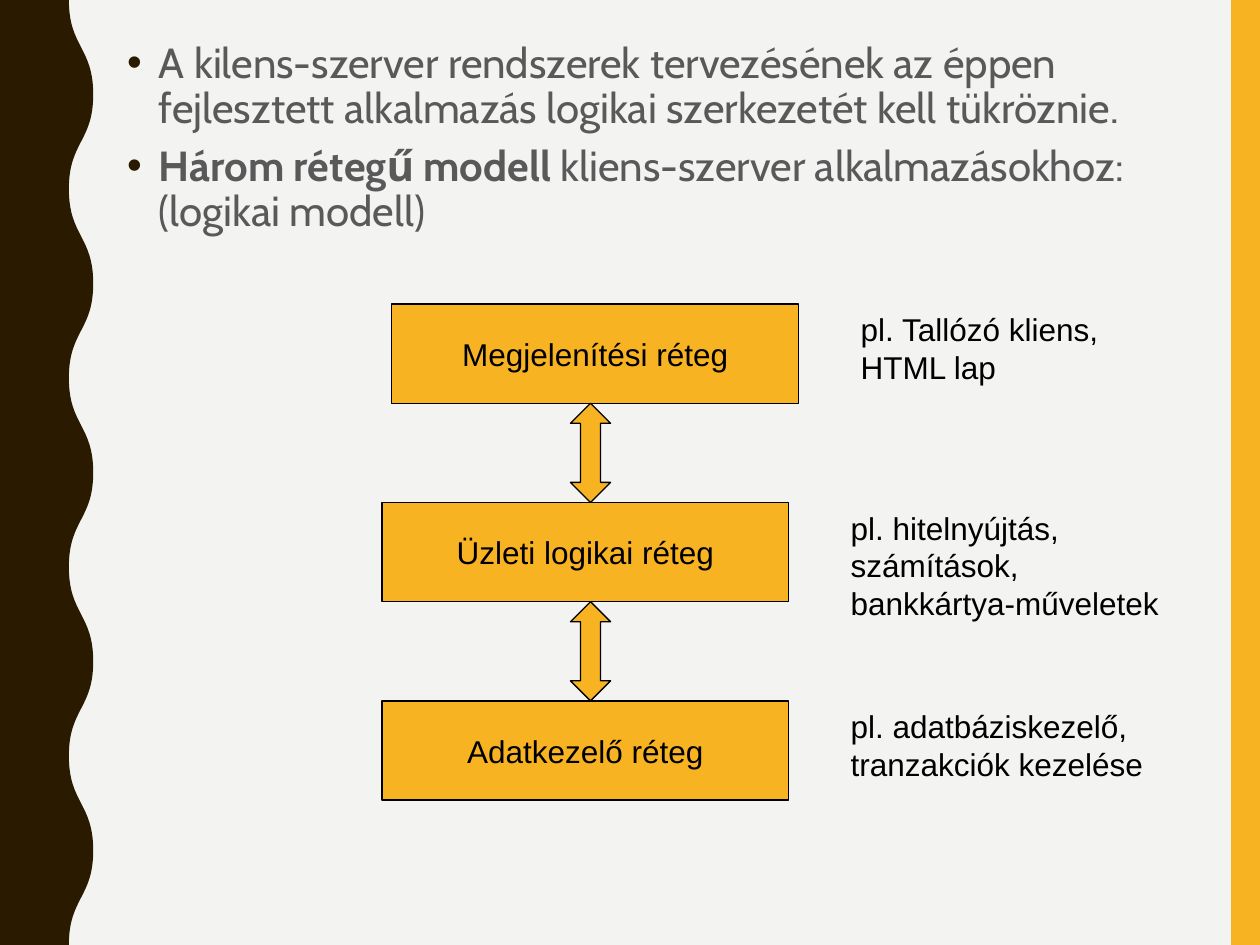
from dataclasses import dataclass
from itertools import pairwise

from lxml.etree import Element, SubElement
from pptx import Presentation
from pptx.dml.color import RGBColor
from pptx.enum.shapes import MSO_SHAPE as Preset
from pptx.enum.text import MSO_ANCHOR as Anchor, MSO_AUTO_SIZE as AutoSize, PP_ALIGN as Align
from pptx.oxml.ns import qn
from pptx.shapes.autoshape import Shape
from pptx.slide import Slide
from pptx.text.text import Font
from pptx.util import Cm, Pt


@dataclass(frozen=True)
class Theme:
    """Colours, fonts and type sizes of the slide."""
    background: str = "F3F3F2"
    accent: str = "F8B323"
    dark: str = "2A1A00"
    body: str = "595959"
    ink: str = "000000"
    body_font: str = "Cabin"
    diagram_font: str = "Arial"
    body_size: int = 24
    diagram_size: int = 18
    outline: float = 0.75


@dataclass(frozen=True)
class Layer:
    """One layer of the model with its example; lengths in centimetres."""
    label: str
    example: str
    left: float
    example_height: float


THEME = Theme()
SLIDE_WIDTH, SLIDE_HEIGHT = 25.4, 19.05
LAYER_TOP, LAYER_WIDTH, LAYER_HEIGHT, LAYER_PITCH = 6.13, 8.2, 2, 4
ARROW_LEFT, ARROW_WIDTH = 11.5, 0.81
EXAMPLE_OFFSET, EXAMPLE_WIDTH = 9.2, 6.8
LAYERS = [
    Layer("Megjelenítési réteg", "pl. Tallózó kliens, HTML lap", 7.9, 1.78),
    Layer("Üzleti logikai réteg", "pl. hitelnyújtás, számítások, bankkártya-műveletek", 7.7, 2.54),
    Layer("Adatkezelő réteg", "pl. adatbáziskezelő, tranzakciók kezelése", 7.7, 1.78),
]
POINTS = [
    ["A kilens-szerver rendszerek tervezésének az éppen fejlesztett alkalmazás "
     "logikai szerkezetét kell tükröznie."],
    ["Három rétegű modell", " kliens-szerver alkalmazásokhoz: (logikai modell)"],
]


def color(value: str) -> RGBColor:
    """Turn a hex value into a colour."""
    return RGBColor.from_string(value)


def set_font(font: Font, name: str, size: float, value: str) -> None:
    """Give a font its face, size and colour."""
    font.name, font.size = name, Pt(size)
    font.color.rgb = color(value)


def paint(shape: Shape, fill: str, outlined: bool = False) -> None:
    """Fill a shape, with or without the thin outline."""
    shape.shadow.inherit = False
    shape.fill.solid()
    shape.fill.fore_color.rgb = color(fill)
    if outlined:
        shape.line.color.rgb = color(THEME.ink)
        shape.line.width = Pt(THEME.outline)
    else:
        shape.line.fill.background()


def add_wave(slide: Slide) -> None:
    """Draw the wavy band along the left edge, one curve for each half wave."""
    trough, crest, half_waves = 1.39, 1.88, 10
    turns = [(Cm(crest if turn % 2 else trough), Cm(SLIDE_HEIGHT * turn / half_waves))
             for turn in range(half_waves + 1)]
    outline = slide.shapes.build_freeform(0, 0)
    outline.add_line_segments([*turns, (0, Cm(SLIDE_HEIGHT))])
    wave = outline.convert_to_shape()
    paint(wave, THEME.dark)
    sides = list(wave.element.iter(qn("a:lnTo")))[1:half_waves + 1]
    for side, ((start_x, start_y), (end_x, end_y)) in zip(sides, pairwise(turns)):
        side.tag = qn("a:cubicBezTo")
        middle = str((start_y + end_y) // 2)
        for position, x in enumerate((start_x, end_x)):
            side.insert(position, Element(qn("a:pt"), x=str(int(x)), y=middle))


def add_points(slide: Slide) -> None:
    """Write the bullet points in the body placeholder."""
    body = slide.placeholders[1]
    body.left, body.top, body.width, body.height = Cm(2.31), Cm(0.72), Cm(21.82), Cm(4.8)
    frame = body.text_frame
    frame.auto_size = AutoSize.NONE
    frame.vertical_anchor = Anchor.TOP
    for index, parts in enumerate(POINTS):
        paragraph = frame.paragraphs[0] if index == 0 else frame.add_paragraph()
        paragraph.line_spacing = 0.9
        paragraph.space_before = Pt(7 if index else 0)
        properties = paragraph._p.get_or_add_pPr()
        properties.set("marL", str(Cm(0.64)))
        properties.set("indent", str(-Cm(0.64)))
        bullet_color = SubElement(properties, qn("a:buClr"))
        SubElement(bullet_color, qn("a:srgbClr"), val=THEME.dark)
        SubElement(properties, qn("a:buFont"), typeface=THEME.diagram_font)
        SubElement(properties, qn("a:buChar"), char="•")
        for part in parts:
            run = paragraph.add_run()
            run.text = part
            set_font(run.font, THEME.body_font, THEME.body_size, THEME.body)
            run.font.bold = len(parts) > 1 and part == parts[0]


def add_layer(slide: Slide, layer: Layer, top: float) -> None:
    """Draw a layer box and its example to the right."""
    box = slide.shapes.add_shape(
        Preset.RECTANGLE, Cm(layer.left), Cm(top), Cm(LAYER_WIDTH), Cm(LAYER_HEIGHT))
    paint(box, THEME.accent, outlined=True)
    box.text_frame.word_wrap = False
    box.text_frame.vertical_anchor = Anchor.MIDDLE
    example = slide.shapes.add_textbox(
        Cm(layer.left + EXAMPLE_OFFSET), Cm(top), Cm(EXAMPLE_WIDTH), Cm(layer.example_height))
    example.text_frame.word_wrap = True
    example.text_frame.auto_size = AutoSize.SHAPE_TO_FIT_TEXT
    for shape, text, align in ((box, layer.label, Align.CENTER),
                               (example, layer.example, Align.LEFT)):
        shape.text_frame.text = text
        paragraph = shape.text_frame.paragraphs[0]
        paragraph.alignment = align
        set_font(paragraph.runs[0].font, THEME.diagram_font, THEME.diagram_size, THEME.ink)


def add_arrow(slide: Slide, top: float) -> None:
    """Draw the two-way arrow between two layers."""
    arrow = slide.shapes.add_shape(
        Preset.UP_DOWN_ARROW, Cm(ARROW_LEFT), Cm(top),
        Cm(ARROW_WIDTH), Cm(LAYER_PITCH - LAYER_HEIGHT))
    paint(arrow, THEME.accent, outlined=True)


def main() -> None:
    """Build the slide and save it."""
    deck = Presentation()
    deck.slide_width, deck.slide_height = Cm(SLIDE_WIDTH), Cm(SLIDE_HEIGHT)
    slide = deck.slides.add_slide(deck.slide_layouts[1])
    title = slide.shapes.title.element
    title.getparent().remove(title)
    slide.background.fill.solid()
    slide.background.fill.fore_color.rgb = color(THEME.background)
    side_bar = slide.shapes.add_shape(
        Preset.RECTANGLE, Cm(24.82), 0, Cm(0.58), Cm(SLIDE_HEIGHT))
    paint(side_bar, THEME.accent)
    add_wave(slide)
    add_points(slide)
    for index, layer in enumerate(LAYERS):
        top = LAYER_TOP + index * LAYER_PITCH
        add_layer(slide, layer, top)
        if index < len(LAYERS) - 1:
            add_arrow(slide, top + LAYER_HEIGHT)
    deck.save("out.pptx")


if __name__ == "__main__":
    main()
